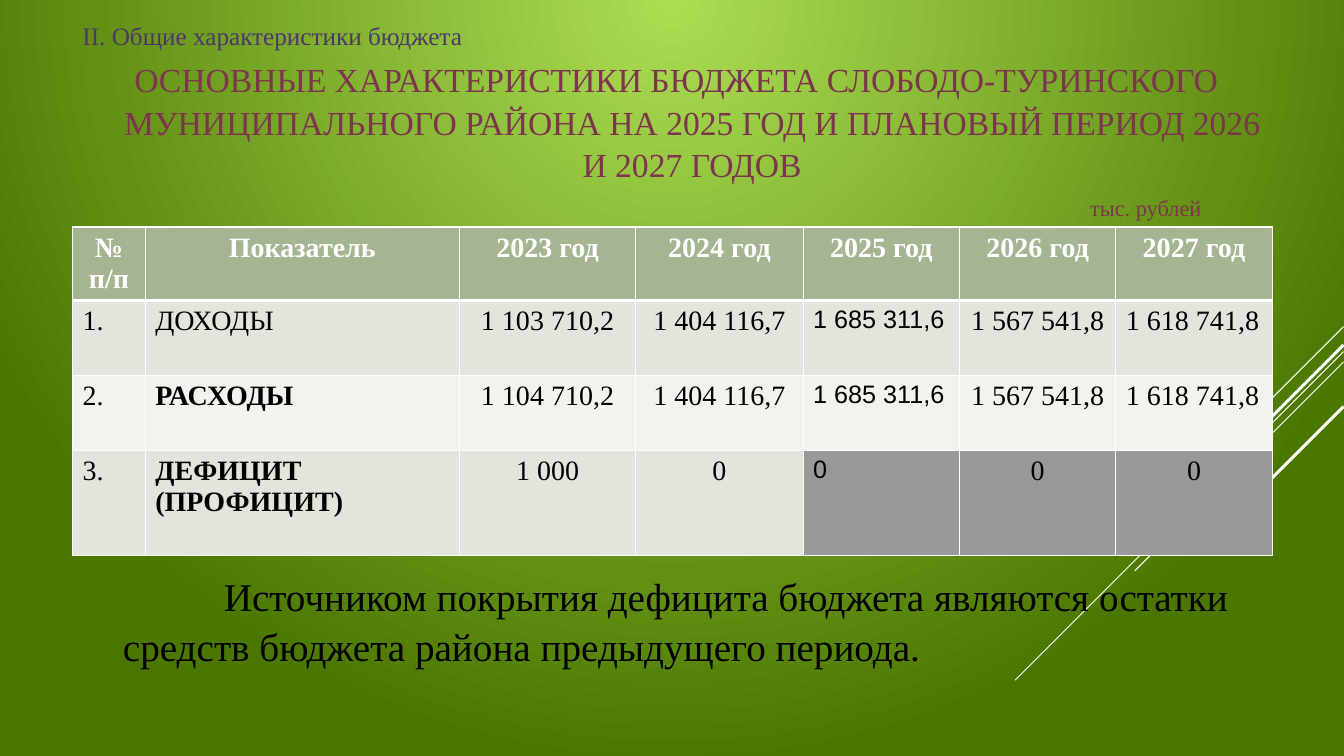
import pptx
import pptx.dml.color
import pptx.enum.shapes
import pptx.enum.text
import pptx.oxml
import pptx.oxml.ns
import pptx.util
from dataclasses import dataclass

Cm = pptx.util.Cm
Pt = pptx.util.Pt
Align = pptx.enum.text.PP_ALIGN
Anchor = pptx.enum.text.MSO_ANCHOR
NS = pptx.oxml.ns.nsdecls("a")
SERIF = "Times New Roman"
SANS = "Arial"
HUES = {
    "glow": "ACDE54", "edge": "4B7700", "white": "FFFFFF", "black": "000000",
    "violet": "4C376B", "plum": "7C354D", "head": "A5B592",
    "odd": "E1E5DC", "even": "F0F3EE", "grey": "999999",
}
LEFT, WIDTH = 1.83, 30.2


@dataclass
class Ray:
    top: float
    reach: float
    weight: float


@dataclass
class Para:
    text: str
    size: float
    hue: str
    align: Align = Align.LEFT
    margin: float = 0
    indent: float = 0
    right: float = 0
    space: float = 1.05


@dataclass
class Box:
    top: float
    height: float
    paras: list[Para]
    anchor: Anchor = Anchor.TOP


RAYS = [
    Ray(8.23, 2.54, 0.75), Ray(8.86, 8.28, 0.75), Ray(9.12, 5.26, 0.75),
    Ray(8.69, 4.85, 2.25), Ray(10.24, 3.53, 2.25),
]
BOXES = [
    Box(0.48, 0.81, [Para("II. Общие характеристики бюджета", 18, "violet", space=1)], Anchor.MIDDLE),
    Box(1.32, 4.39, [
        Para("ОСНОВНЫЕ ХАРАКТЕРИСТИКИ БЮДЖЕТА СЛОБОДО-ТУРИНСКОГО МУНИЦИПАЛЬНОГО РАЙОНА "
             "НА 2025 ГОД И ПЛАНОВЫЙ ПЕРИОД 2026 И 2027 ГОДОВ", 24, "plum", Align.CENTER, 1.02, -0.79),
        Para("тыс. рублей", 16, "plum", Align.RIGHT, right=1.5),
    ]),
    Box(14.25, 2.49, [
        Para("Источником покрытия дефицита бюджета являются остатки средств бюджета района "
             "предыдущего периода.", 28, "black", margin=1.02, indent=2.54),
    ]),
]
COLS = [1.83, 7.92, 4.44, 4.22, 3.94, 3.94, 3.94]
ROWS = [1.85, 1.89, 1.89, 2.65]
CELLS = [
    ["№ п/п", "Показатель"] + [f"{year} год" for year in range(2023, 2028)],
    ["1.", "ДОХОДЫ", "1 103 710,2", "1 404 116,7", "1 685 311,6", "1 567 541,8", "1 618 741,8"],
    ["2.", "РАСХОДЫ", "1 104 710,2", "1 404 116,7", "1 685 311,6", "1 567 541,8", "1 618 741,8"],
    ["3.", "ДЕФИЦИТ (ПРОФИЦИТ)", "1 000", "0", "0", "0", "0"],
]


def tint(name: str) -> pptx.dml.color.RGBColor:
    return pptx.dml.color.RGBColor.from_string(HUES[name])


def add_run(para, text: str, size: float, hue: str, face: str = SERIF, bold: bool = False) -> None:
    run = para.add_run()
    run.text = text
    run.font.size = Pt(size)
    run.font.name = face
    run.font.bold = bold
    run.font.color.rgb = tint(hue)


def paint_back(slide) -> None:
    fill = slide.background.fill
    fill.gradient()
    for stop, name, place in zip(fill.gradient_stops, ("glow", "edge"), (0, 1)):
        stop.color.rgb = tint(name)
        stop.position = place
    grad = slide.element.find(".//" + pptx.oxml.ns.qn("a:gradFill"))
    line = grad.find(pptx.oxml.ns.qn("a:lin"))
    grad.replace(line, pptx.oxml.parse_xml(
        f'<a:path {NS} path="circle"><a:fillToRect l="50000" t="0" r="50000" b="100000"/></a:path>'))


def draw_ray(slide, ray: Ray) -> None:
    edge = 33.86
    line = slide.shapes.add_connector(
        pptx.enum.shapes.MSO_CONNECTOR.STRAIGHT,
        Cm(edge), Cm(ray.top), Cm(edge - ray.reach), Cm(ray.top + ray.reach))
    line.line.color.rgb = tint("white")
    line.line.width = Pt(ray.weight)
    line.element.spPr.append(pptx.oxml.parse_xml(f"<a:effectLst {NS}/>"))


def draw_box(slide, box: Box) -> None:
    frame = slide.shapes.add_textbox(Cm(LEFT), Cm(box.top), Cm(WIDTH), Cm(box.height)).text_frame
    frame.word_wrap = True
    frame.vertical_anchor = box.anchor
    for spot, item in enumerate(box.paras):
        para = frame.add_paragraph() if spot else frame.paragraphs[0]
        para.alignment = item.align
        para.line_spacing = item.space
        para.space_before = Pt(6 if spot else 0)
        props = para._p.get_or_add_pPr()
        for key, size in (("marL", item.margin), ("indent", item.indent), ("marR", item.right)):
            props.set(key, str(int(Cm(size))))
        add_run(para, item.text, item.size, item.hue)


def rule_cell(cell, row: int) -> None:
    props = cell._tc.get_or_add_tcPr()
    thick = {"T": row == 1, "B": row == 0}
    for spot, side in enumerate("LRTB"):
        width = int(Pt(3 if thick.get(side) else 0.96))
        props.insert(spot, pptx.oxml.parse_xml(
            f'<a:ln{side} {NS} w="{width}"><a:solidFill><a:srgbClr val="{HUES["white"]}"/>'
            f"</a:solidFill></a:ln{side}>"))


def fill_cell(cell, row: int, col: int, text: str) -> None:
    head = row == 0
    plain = not head and col == 4
    if head:
        shade = "head"
    elif row == 3 and col >= 4:
        shade = "grey"
    else:
        shade = "odd" if row % 2 else "even"
    cell.fill.solid()
    cell.fill.fore_color.rgb = tint(shade)
    rule_cell(cell, row)
    para = cell.text_frame.paragraphs[0]
    mid = head or col in (2, 3, 5) or (row == 3 and col == 6)
    para.alignment = Align.CENTER if mid else Align.LEFT
    add_run(para, text, 18 if plain else 20, "white" if head else "black",
            SANS if plain else SERIF, head or (col == 1 and row > 1))


def draw_table(slide) -> None:
    table = slide.shapes.add_table(
        len(ROWS), len(COLS), Cm(LEFT), Cm(5.72), Cm(sum(COLS)), Cm(sum(ROWS))).table
    table.horz_banding = False
    for col, width in enumerate(COLS):
        table.columns[col].width = Cm(width)
    for row, height in enumerate(ROWS):
        table.rows[row].height = Cm(height)
        for col, text in enumerate(CELLS[row]):
            fill_cell(table.cell(row, col), row, col, text)


def main() -> None:
    deck = pptx.Presentation()
    deck.slide_width, deck.slide_height = Cm(33.87), Cm(19.05)
    slide = deck.slides.add_slide(deck.slide_layouts[6])
    paint_back(slide)
    for ray in RAYS:
        draw_ray(slide, ray)
    draw_table(slide)
    for box in BOXES:
        draw_box(slide, box)
    deck.save("out.pptx")


if __name__ == "__main__":
    main()
